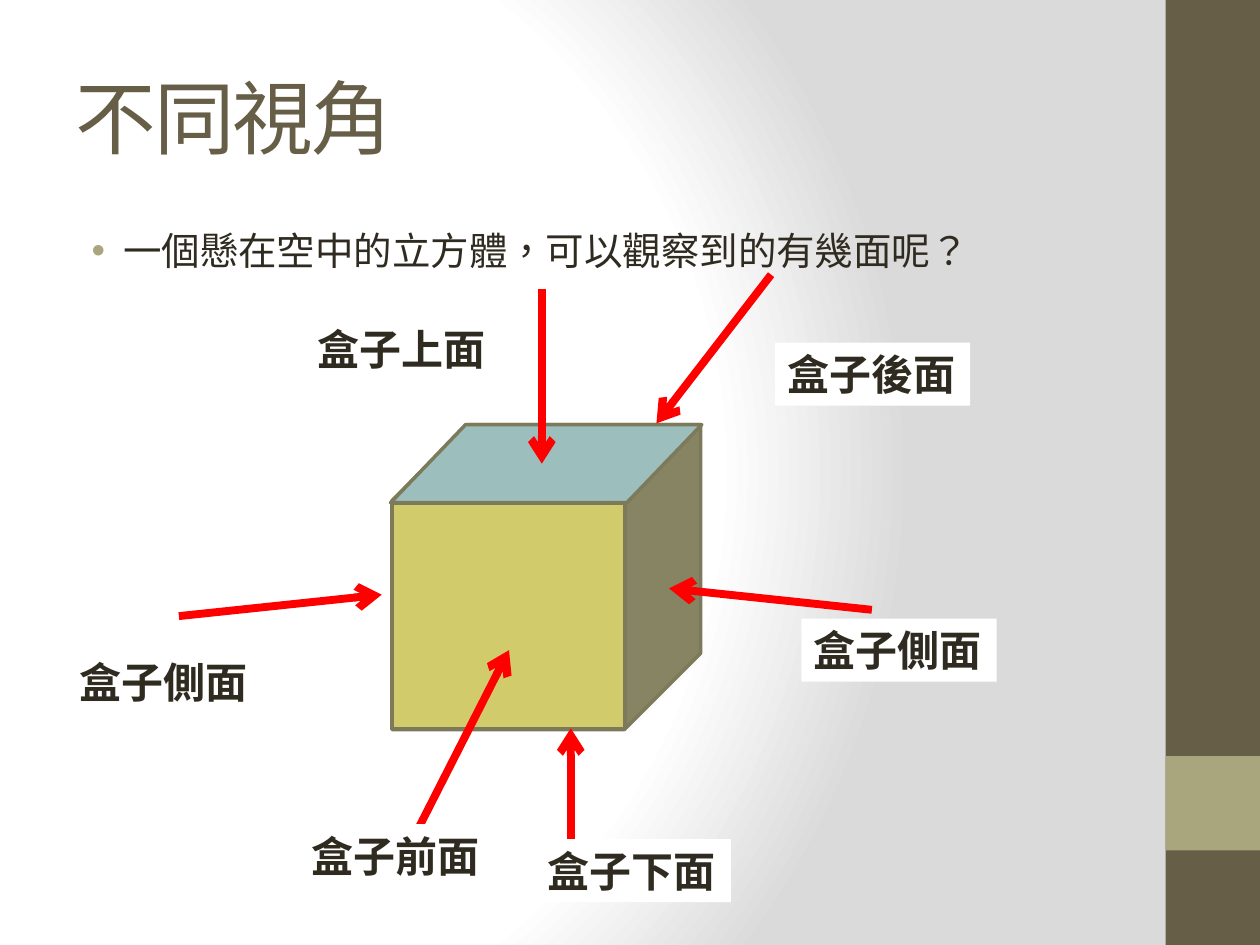
import pptx
import pptx.util
import pptx.oxml
import pptx.oxml.ns
import pptx.dml.color
import pptx.enum.shapes
import pptx.enum.text
from pptx.util import Inches

RGBColor = pptx.dml.color.RGBColor
SHAPE = pptx.enum.shapes.MSO_SHAPE
ANCHOR = pptx.enum.text.MSO_ANCHOR
BROWN = RGBColor(0x67, 0x5E, 0x47)
OLIVE = RGBColor(0xA9, 0xA5, 0x7C)
EDGE = RGBColor(0x7D, 0x7A, 0x5C)
TEAL = RGBColor(0x9C, 0xBE, 0xBD)
YELLOW = RGBColor(0xD2, 0xCB, 0x6C)
INK = RGBColor(0x2F, 0x2B, 0x20)
RED = RGBColor(0xFF, 0x00, 0x00)
WHITE = RGBColor(0xFF, 0xFF, 0xFF)
NAMESPACE = pptx.oxml.ns.nsdecls("a")


def add_block(shapes, kind, box, fill, edge=None):
    shape = shapes.add_shape(kind, *map(Inches, box))
    shape.shadow.inherit = False
    shape.fill.solid()
    shape.fill.fore_color.rgb = fill
    if edge is None:
        shape.line.fill.background()
    else:
        shape.line.color.rgb = edge
        shape.line.width = pptx.util.Pt(2)
    return shape


def write_text(shape, text, color, frame_format, font_format):
    for name, value in frame_format.items():
        setattr(shape.text_frame, name, value)
    paragraph = shape.text_frame.paragraphs[0]
    paragraph.alignment = pptx.enum.text.PP_ALIGN.LEFT
    run = paragraph.add_run()
    run.text = text
    for name, value in font_format.items():
        setattr(run.font, name, value)
    run.font.color.rgb = color
    run._r.get_or_add_rPr().set("lang", "zh-TW")
    return paragraph, run


presentation = pptx.Presentation()
presentation.slide_width = Inches(10)
presentation.slide_height = Inches(7.5)
slide = presentation.slides.add_slide(presentation.slide_layouts[6])

# Background: radial fade from white to grey
slide.background.fill.gradient()
gradient = slide.background._cSld.bg.bgPr.find(pptx.oxml.ns.qn("a:gradFill"))
stops = "".join(
    f'<a:gs pos="{position * 1000}"><a:srgbClr val="{color}"/></a:gs>'
    for position, color in [(0, "FFFFFF"), (75, "FFFFFF"), (100, "DADADA")])
gradient.getparent().replace(gradient, pptx.oxml.parse_xml(
    f'<a:gradFill {NAMESPACE} rotWithShape="1"><a:gsLst>{stops}</a:gsLst>'
    '<a:path path="circle"><a:fillToRect l="20000" t="50000" r="100000" b="50000"/>'
    '</a:path></a:gradFill>'))

# Side band
add_block(slide.shapes, SHAPE.RECTANGLE, (9.25, 0, 0.75, 7.5), BROWN)
add_block(slide.shapes, SHAPE.RECTANGLE, (9.25, 6, 0.75, 0.75), OLIVE)

# Title
title = slide.shapes.add_textbox(Inches(0.5), Inches(0.3), Inches(8.33), Inches(1.25))
paragraph, run = write_text(
    title, "不同視角", BROWN,
    {"word_wrap": True, "vertical_anchor": ANCHOR.MIDDLE},
    {"name": "Cambria", "size": pptx.util.Pt(46)})
run._r.get_or_add_rPr().set("spc", "-100")

# Bulleted question
question = slide.shapes.add_textbox(Inches(0.5), Inches(1.75), Inches(8.33), Inches(5.25))
paragraph, run = write_text(
    question, "一個懸在空中的立方體，可以觀察到的有幾面呢？", INK,
    {"word_wrap": True, "vertical_anchor": ANCHOR.TOP},
    {"name": "Calibri", "size": pptx.util.Pt(22)})
paragraph.space_before = pptx.util.Pt(4.4)
properties = paragraph._p.get_or_add_pPr()
properties.set("marL", str(Inches(0.38)))
properties.set("indent", str(Inches(-0.25)))
for bullet in (f'<a:buClr {NAMESPACE}><a:srgbClr val="{OLIVE}"/></a:buClr>',
               f'<a:buFont {NAMESPACE} typeface="Arial"/>',
               f'<a:buChar {NAMESPACE} char="•"/>'):
    properties.append(pptx.oxml.parse_xml(bullet))

# Box with coloured top and front
box_group = slide.shapes.add_group_shape()
add_block(box_group.shapes, SHAPE.CUBE, (3.11, 3.37, 2.45, 2.42), OLIVE, EDGE)
top = add_block(box_group.shapes, SHAPE.PARALLELOGRAM, (3.1, 3.37, 2.47, 0.62), TEAL, EDGE)
top.adjustments[0] = 0.96
add_block(box_group.shapes, SHAPE.RECTANGLE, (3.11, 3.99, 1.85, 1.79), YELLOW, EDGE)

# Arrows pointing at the faces
for start_x, start_y, end_x, end_y in [
    (3.15, 6.91, 4.04, 5.16),
    (1.42, 4.89, 3.03, 4.72),
    (6.92, 4.84, 5.31, 4.67),
    (4.3, 2.29, 4.3, 3.68),
    (6.12, 2.18, 5.21, 3.36),
    (4.53, 7.01, 4.53, 5.78),
]:
    arrow = slide.shapes.add_connector(
        pptx.enum.shapes.MSO_CONNECTOR.STRAIGHT,
        Inches(start_x), Inches(start_y), Inches(end_x), Inches(end_y))
    arrow.line.color.rgb = RED
    arrow.line.width = pptx.util.Pt(4.5)
    arrow.line._get_or_add_ln().append(
        pptx.oxml.parse_xml(f'<a:tailEnd {NAMESPACE} type="arrow"/>'))
    arrow._element.spPr.append(pptx.oxml.parse_xml(f"<a:effectLst {NAMESPACE}/>"))

# Face labels
for text, left, label_top in [
    ("盒子前面", 2.37, 6.54),
    ("盒子側面", 0.53, 5.16),
    ("盒子側面", 6.36, 4.91),
    ("盒子後面", 6.15, 2.72),
    ("盒子上面", 2.42, 2.52),
    ("盒子下面", 4.25, 6.66),
]:
    label = add_block(slide.shapes, SHAPE.RECTANGLE, (left, label_top, 1.55, 0.5), WHITE)
    write_text(
        label, text, INK,
        {"word_wrap": False, "vertical_anchor": ANCHOR.TOP,
         "auto_size": pptx.enum.text.MSO_AUTO_SIZE.SHAPE_TO_FIT_TEXT},
        {"name": "Calibri", "size": pptx.util.Pt(24), "bold": True})

presentation.save("out.pptx")
